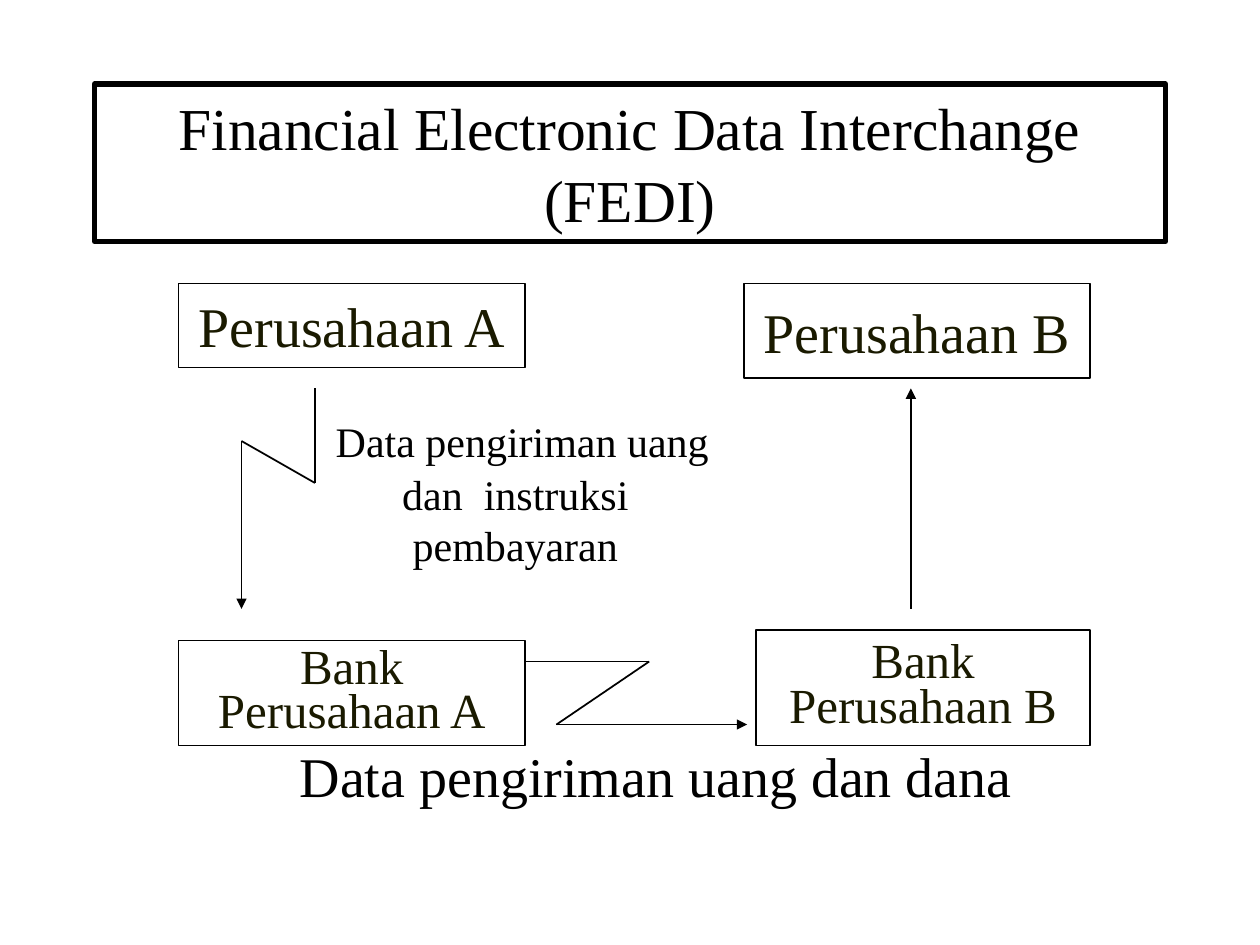
import itertools

import pptx
import pptx.dml.color
import pptx.enum.shapes
import pptx.enum.text
import pptx.oxml
import pptx.oxml.ns
import pptx.util

Pt = pptx.util.Pt
ALIGN = pptx.enum.text.PP_ALIGN
ANCHOR = pptx.enum.text.MSO_ANCHOR
FONT, BLACK, WHITE, BOX_TEXT = "Times New Roman", "000000", "FFFFFF", "1A1A00"


def color(hex_value):
    return pptx.dml.color.RGBColor.from_string(hex_value)


class Diagram:
    """Draws on one slide in one style; all lengths are points."""

    def __init__(self, slide):
        self.slide = slide

    def outline(self, sp, width):
        sp.line.color.rgb = color(BLACK)
        sp.line.width = Pt(width)

    def style(self, p, size, text_color=BLACK):
        p.alignment = ALIGN.CENTER
        p.font.name = FONT
        p.font.size = Pt(size)
        p.font.color.rgb = color(text_color)

    def title(self, text, left, top, width, height):
        sp = self.slide.shapes.title
        sp.left, sp.top, sp.width, sp.height = map(Pt, (left, top, width, height))
        self.outline(sp, 3)
        tf = sp.text_frame
        tf.text = text
        tf.auto_size = pptx.enum.text.MSO_AUTO_SIZE.NONE
        tf.vertical_anchor = ANCHOR.MIDDLE
        self.style(tf.paragraphs[0], 34)

    def box(self, lines, left, top, width, height, size, spacing=1.0):
        sp = self.slide.shapes.add_shape(
            pptx.enum.shapes.MSO_SHAPE.RECTANGLE, *map(Pt, (left, top, width, height)))
        sp.shadow.inherit = False
        sp.fill.solid()
        sp.fill.fore_color.rgb = color(WHITE)
        self.outline(sp, 1)
        tf = sp.text_frame
        tf.text = "\n".join(lines)
        tf.word_wrap = False
        tf.vertical_anchor = ANCHOR.MIDDLE
        for p in tf.paragraphs:
            self.style(p, size, BOX_TEXT)
            p.line_spacing = spacing

    def label(self, text, left, top, width, height, size):
        sp = self.slide.shapes.add_textbox(*map(Pt, (left, top, width, height)))
        tf = sp.text_frame
        tf.word_wrap = True
        p = tf.paragraphs[0]
        self.style(p, size)
        p.space_before = Pt(3)
        p.add_run().text = text
        return p

    def arrow(self, *points):
        """Joins the points with straight lines and puts a head on the last one."""
        for start, end in itertools.pairwise(points):
            line = self.slide.shapes.add_connector(
                pptx.enum.shapes.MSO_CONNECTOR.STRAIGHT, *map(Pt, start + end))
            self.outline(line, 1)
            pptx.oxml.ns.qn("a:effectLst")
            line._element.spPr.append(line._element.spPr.makeelement(
                pptx.oxml.ns.qn("a:effectLst"), {}))
        ln = line.line._get_or_add_ln()
        ln.append(ln.makeelement(pptx.oxml.ns.qn("a:tailEnd"), {"type": "triangle"}))


def main():
    prs = pptx.Presentation()
    prs.slide_width, prs.slide_height = Pt(720), Pt(540)
    d = Diagram(prs.slides.add_slide(prs.slide_layouts[5]))

    d.title("Financial Electronic Data Interchange (FEDI)", 54, 48, 612, 90)

    d.box(["Bank", "Perusahaan A"], 102, 366, 198, 60, 28, 0.75)
    d.box(["Bank", "Perusahaan B"], 432, 360, 191, 66, 28, 0.75)
    d.box(["Perusahaan A"], 102, 162, 198, 48, 32)
    d.box(["Perusahaan B"], 425, 162, 198, 54, 32)

    d.arrow((180, 222), (180, 276), (138, 252), (138, 348))
    d.arrow((300, 378), (371, 378), (318, 414), (427, 414))
    d.arrow((520.5, 348), (520.5, 222))

    p = d.label(" ", 168.5, 226, 252, 103, 32)
    r = p.add_run()
    r.text = "Data pengiriman uang dan  instruksi pembayaran"
    r.font.size = Pt(24)
    d.label("Data pengiriman uang dan dana", 162, 420, 426, 45, 32)

    prs.save("out.pptx")


if __name__ == "__main__":
    main()
